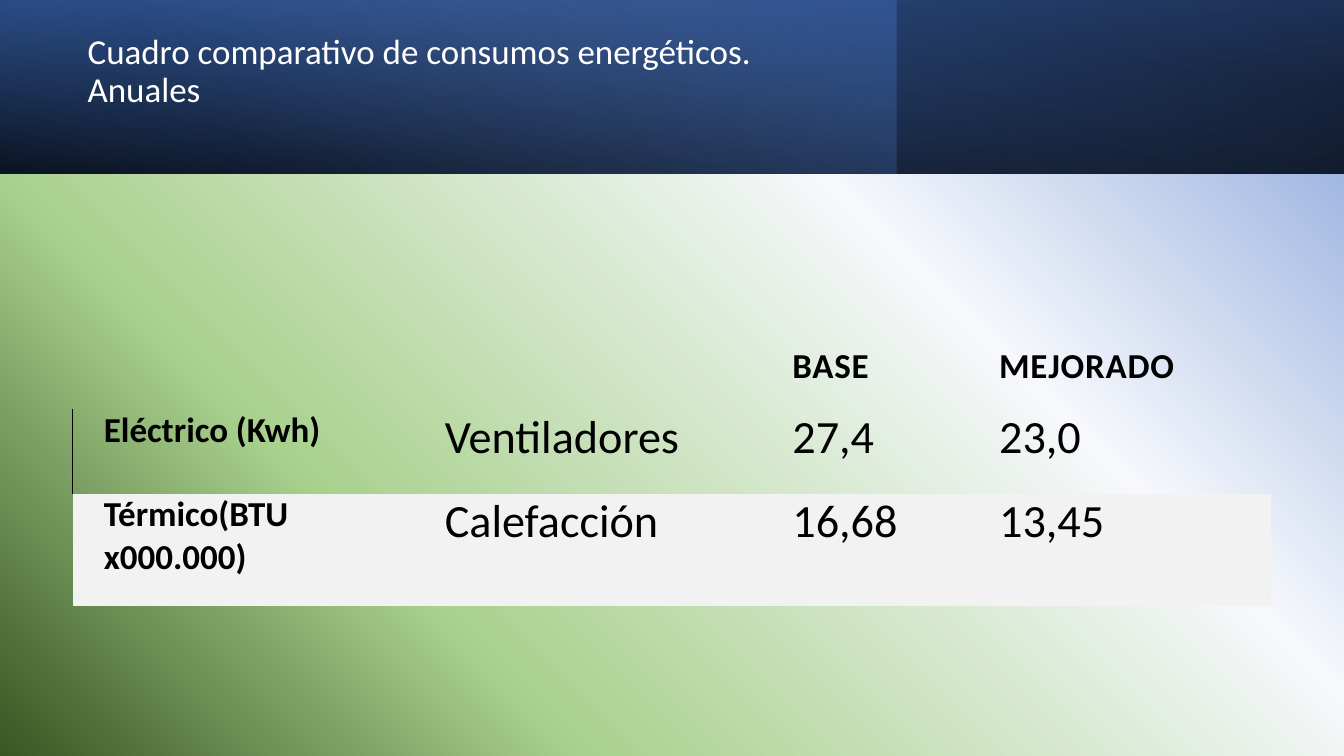
from dataclasses import dataclass

from lxml import etree
from pptx import Presentation
from pptx.dml import color
from pptx.enum import shapes, text
from pptx.oxml import ns
from pptx.util import Cm, Pt


@dataclass(frozen=True)
class Theme:
    font: str = "Calibri"
    black: str = "000000"
    white: str = "FFFFFF"
    band: str = "F2F2F2"
    navy: str = "2F5597"
    blue: str = "4472C4"
    sky: str = "8FAADC"
    mist: str = "F6F8FC"
    leaf: str = "A9D18E"
    forest: str = "385723"
    label_size: int = 25
    value_size: int = 33


THEME = Theme()
WIDTH, HEIGHT, HEADER_HEIGHT = Cm(33.87), Cm(19.05), Cm(4.37)


def add_child(parent, tag, **attributes):
    return etree.SubElement(parent, ns.qn(tag), **{k: str(v) for k, v in attributes.items()})


def apply_gradient(fill, owner, stops, angle):
    fill.gradient()
    gradient = owner.xpath(".//a:gradFill")[0]
    for child in list(gradient):
        gradient.remove(child)
    stop_list = add_child(gradient, "a:gsLst")
    for position, rgb, opacity in stops:
        stop = add_child(stop_list, "a:gs", pos=position * 1000)
        tint = add_child(stop, "a:srgbClr", val=rgb)
        if opacity < 100:
            add_child(tint, "a:alpha", val=opacity * 1000)
    add_child(gradient, "a:lin", ang=angle * 60000, scaled=0)


def add_header_layer(slide, width, stops, angle, rotation=0, flipped=False):
    layer = slide.shapes.add_shape(shapes.MSO_SHAPE.RECTANGLE, 0, 0, width, HEADER_HEIGHT)
    layer.shadow.inherit = False
    layer.line.fill.background()
    layer.rotation = rotation
    if flipped:
        layer._element.spPr.xfrm.set("flipH", "1")
    apply_gradient(layer.fill, layer._element, stops, angle)


def style_runs(paragraph, size, rgb, bold=False, spacing=0):
    for run in paragraph.runs:
        run.font.name = THEME.font
        run.font.size = Pt(size)
        run.font.bold = bold
        run.font.color.rgb = color.RGBColor.from_string(rgb)
        if spacing:
            run.font._element.set("spc", str(spacing))


def add_title(slide, wording):
    title = slide.shapes.add_textbox(Cm(1.96), Cm(0.69), Cm(19.61), Cm(3.23)).text_frame
    title.word_wrap = True
    title.vertical_anchor = text.MSO_ANCHOR.MIDDLE
    title.margin_bottom = Cm(1.1)
    title.text = wording
    title.paragraphs[0].line_spacing = 0.9
    style_runs(title.paragraphs[0], THEME.label_size, THEME.white)


def fill_cell(cell, wording, is_heading, is_label, banded):
    cell.margin_left = cell.margin_right = Cm(0.38)
    cell.margin_top = Cm(0.53) if is_heading else 0
    cell.margin_bottom = Cm(0.53)
    cell.vertical_anchor = text.MSO_ANCHOR.BOTTOM if is_heading else text.MSO_ANCHOR.TOP
    if banded:
        cell.fill.solid()
        cell.fill.fore_color.rgb = color.RGBColor.from_string(THEME.band)
    else:
        cell.fill.background()
    cell.text_frame.text = wording
    paragraph = cell.text_frame.paragraphs[0]
    paragraph.alignment = text.PP_ALIGN.JUSTIFY
    properties = paragraph._p.get_or_add_pPr()
    properties.set("marL", str(Cm(0.41)))
    properties.set("indent", "0")
    bold = is_heading or is_label
    size = THEME.label_size if bold else THEME.value_size
    style_runs(paragraph, size, THEME.black, bold, 60 if is_heading else 0)


def add_left_border(cell):
    properties = cell._tc.get_or_add_tcPr()
    border = add_child(properties, "a:lnL", w=Pt(1))
    add_child(add_child(border, "a:solidFill"), "a:srgbClr", val=THEME.black)
    properties.insert(0, border)


def add_consumption_table(slide, rows, widths, heights):
    table = slide.shapes.add_table(
        len(rows), len(widths), Cm(1.83), Cm(8), Cm(sum(widths)), Cm(sum(heights))
    ).table
    table.first_row = table.horz_banding = False
    style = table._tbl.tblPr.find(ns.qn("a:tableStyleId"))
    style.text = "{2D5ABB26-0587-4C30-8999-92F81FD0307C}"
    for column, width in zip(table.columns, widths):
        column.width = Cm(width)
    for row, height in zip(table.rows, heights):
        row.height = Cm(height)
    for r, row in enumerate(rows):
        for c, wording in enumerate(row):
            fill_cell(table.cell(r, c), wording, r == 0, c == 0, r == 2)
    table.cell(0, 0).merge(table.cell(0, 1))
    add_left_border(table.cell(1, 0))


def main():
    deck = Presentation()
    deck.slide_width, deck.slide_height = WIDTH, HEIGHT
    slide = deck.slides.add_slide(deck.slide_layouts[6])
    backdrop = [(3, THEME.sky, 100), (33, THEME.mist, 100),
                (72, THEME.leaf, 100), (100, THEME.forest, 100)]
    apply_gradient(slide.background.fill, slide._element, backdrop, 135)
    add_header_layer(slide, WIDTH, [(0, THEME.black, 96), (100, THEME.navy, 100)],
                     100, rotation=180, flipped=True)
    add_header_layer(slide, Cm(22.58), [(0, THEME.blue, 41), (74, THEME.sky, 0)], 140)
    add_header_layer(slide, WIDTH, [(0, THEME.black, 63), (78, THEME.blue, 15)],
                     260, flipped=True)
    add_title(slide, "Cuadro comparativo de consumos energéticos. Anuales")
    consumption = [
        ("", "", "BASE", "MEJORADO"),
        ("Eléctrico (Kwh)", "Ventiladores", "27,4", "23,0"),
        ("Térmico(BTU x000.000)", "Calefacción", "16,68", "13,45"),
    ]
    add_consumption_table(slide, consumption, (8.59, 8.76, 5.21, 7.65), (2.31, 2.13, 2.82))
    deck.save("out.pptx")


if __name__ == "__main__":
    main()
